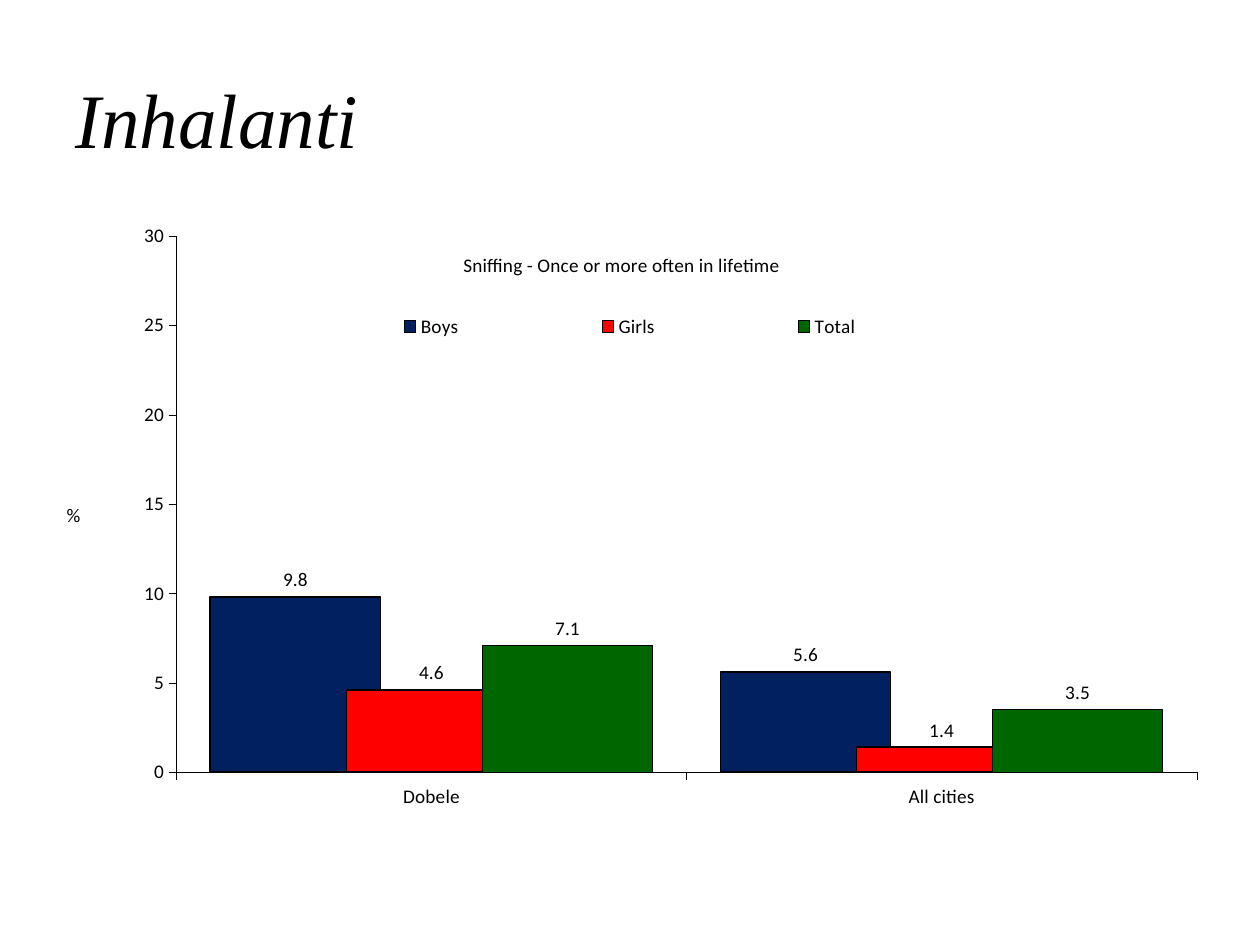
from lxml import etree
from pptx import Presentation
from pptx.chart.data import CategoryChartData
from pptx.dml.color import RGBColor
from pptx.enum.chart import XL_CHART_TYPE, XL_LABEL_POSITION, XL_LEGEND_POSITION, XL_TICK_MARK
from pptx.enum.text import MSO_ANCHOR, PP_ALIGN
from pptx.oxml.ns import qn
from pptx.util import Inches, Pt

COLUMNS = XL_CHART_TYPE.COLUMN_CLUSTERED
OUTSIDE_END = XL_LABEL_POSITION.OUTSIDE_END
RIGHT = XL_LEGEND_POSITION.RIGHT
TICK_OUTSIDE, TICK_NONE = XL_TICK_MARK.OUTSIDE, XL_TICK_MARK.NONE

COLORS = {"black": "000000", "Boys": "002060", "Girls": "FF0000", "Total": "006600"}
CATEGORIES = ["Dobele", "All cities"]
# Name, values, outline width in points
SERIES = [("Boys", (9.8, 5.6), 1), ("Girls", (4.6, 1.4), 1), ("Total", (7.1, 3.5), 0.75)]

SLIDE_WIDTH, SLIDE_HEIGHT = Inches(10), Inches(7.5)
TITLE_BOX = (0.05, 0.04, 0.9, 0.17)
CHART_BOX = (0.05, 0.23, 0.9, 0.66)


def color(name):
    return RGBColor.from_string(COLORS[name])


def scale_box(box):
    """Turn shares of the slide's size into lengths."""
    left, top, width, height = box
    return (int(left * SLIDE_WIDTH), int(top * SLIDE_HEIGHT),
            int(width * SLIDE_WIDTH), int(height * SLIDE_HEIGHT))


def style_font(font, name, size, italic=False):
    font.name, font.size = name, Pt(size)
    font.bold, font.italic = False, italic
    font.color.rgb = color("black")


def style_line(line, width):
    line.color.rgb = color("black")
    line.width = Pt(width)


def place_part(element, after, inner=False, **shares):
    """Give a chart part a manual layout, in shares of the chart's size."""
    for old_layout in element.findall(qn("c:layout")):
        element.remove(old_layout)
    layout = etree.Element(qn("c:layout"))
    manual = etree.SubElement(layout, qn("c:manualLayout"))
    settings = [("layoutTarget", "inner")] if inner else []
    settings += [("xMode", "edge"), ("yMode", "edge"), *shares.items()]
    for tag, value in settings:
        etree.SubElement(manual, qn(f"c:{tag}")).set("val", str(value))
    position = element.index(element.find(qn(after))) + 1 if after else 0
    element.insert(position, layout)


def add_title(slide, box):
    title = slide.shapes.title
    title.left, title.top, title.width, title.height = scale_box(box)
    title.text_frame.text = "Inhalanti"
    title.text_frame.vertical_anchor = MSO_ANCHOR.MIDDLE
    paragraph = title.text_frame.paragraphs[0]
    paragraph.alignment = PP_ALIGN.LEFT
    style_font(paragraph.font, "Times New Roman", 44, italic=True)


def write_chart_text(part, text, x, y):
    """Write and place the title of a chart or an axis."""
    part.text_frame.text = text
    style_font(part.text_frame.paragraphs[0].font, "Calibri", 11)
    place_part(part._element, "c:tx", x=x, y=y)


def style_axes(chart):
    for axis in (chart.category_axis, chart.value_axis):
        axis.major_tick_mark = TICK_OUTSIDE
        axis.minor_tick_mark = TICK_NONE
        style_line(axis.format.line, 0.25)
    values = chart.value_axis
    values.has_major_gridlines = False
    values.minimum_scale, values.maximum_scale, values.major_unit = 0, 30, 5
    values.tick_labels.number_format = "0"
    values.tick_labels.number_format_is_linked = False
    write_chart_text(values.axis_title, "%", 0.0, 0.45)
    values.axis_title.text_frame._txBody.bodyPr.set("rot", "0")


def style_columns(plot):
    plot.gap_width, plot.overlap = 40, 20
    plot.vary_by_categories = False
    for series, (name, _, width) in zip(plot.series, SERIES):
        series.format.fill.solid()
        series.format.fill.fore_color.rgb = color(name)
        style_line(series.format.line, width)
        labels = series.data_labels
        labels.show_value = True
        labels.position = OUTSIDE_END
        labels.number_format = "0.0"
        labels.number_format_is_linked = False
        style_font(labels.font, "Calibri", 11)


def add_sniffing_chart(slide, box):
    data = CategoryChartData(number_format="0.0")
    data.categories = CATEGORIES
    for name, values, _ in SERIES:
        data.add_series(name, values)
    chart = slide.shapes.add_chart(COLUMNS, *scale_box(box), data).chart
    style_font(chart.font, "Calibri", 11)
    style_axes(chart)
    style_columns(chart.plots[0])

    chart.has_title = True
    write_chart_text(chart.chart_title, "Sniffing - Once or more often in lifetime", 0.35, 0.05)
    chart.has_legend = True
    chart.legend.position = RIGHT
    chart.legend.include_in_layout = False
    style_font(chart.legend.font, "Calibri", 11)
    place_part(chart.legend._element, "c:legendPos", x=0.18, y=0.15, w=0.64, h=0.05)
    plot_area = chart._chartSpace.find(".//" + qn("c:plotArea"))
    place_part(plot_area, None, inner=True, x=0.1, y=0.03, w=0.9, h=0.86)


def main():
    presentation = Presentation()
    presentation.slide_width, presentation.slide_height = SLIDE_WIDTH, SLIDE_HEIGHT
    slide = presentation.slides.add_slide(presentation.slide_layouts.get_by_name("Title Only"))
    add_title(slide, TITLE_BOX)
    add_sniffing_chart(slide, CHART_BOX)
    presentation.save("out.pptx")


if __name__ == "__main__":
    main()
